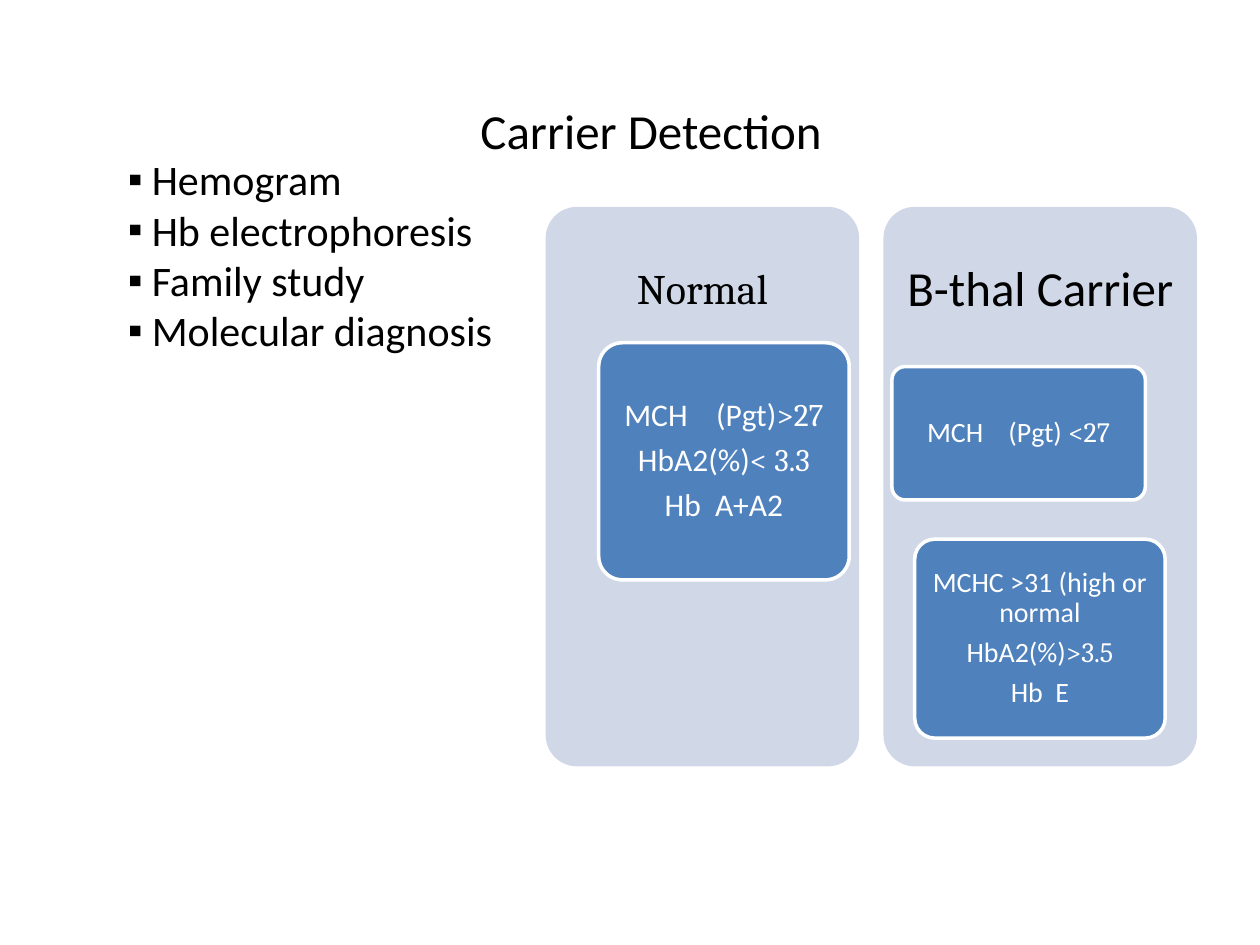
from lxml import etree
from pptx import Presentation
from pptx.dml.color import RGBColor
from pptx.enum.shapes import MSO_SHAPE
from pptx.enum.text import MSO_ANCHOR, MSO_AUTO_SIZE, PP_ALIGN
from pptx.oxml.ns import qn
from pptx.util import Cm, Pt

ROUNDED = MSO_SHAPE.ROUNDED_RECTANGLE
TOP, MIDDLE = MSO_ANCHOR.TOP, MSO_ANCHOR.MIDDLE
LEFT, CENTER = PP_ALIGN.LEFT, PP_ALIGN.CENTER
FIXED = MSO_AUTO_SIZE.NONE

COLORS = {"text": "000000", "panel": "D0D8E8", "card": "4F81BD", "light": "FFFFFF"}
SANS, SERIF = "Calibri", "Cambria"
PANEL_TOP, PANEL_WIDTH, PANEL_HEIGHT, HEADING_HEIGHT = 4.17, 6.32, 11.28, 3.38


def set_attributes(target, values):
    for name, value in values.items():
        setattr(target, name, value)


class SlideBuilder:
    def __init__(self, slide):
        self.slide = slide

    def color(self, name):
        return RGBColor.from_string(COLORS[name])

    def place(self, shape, box):
        names = ("left", "top", "width", "height")
        set_attributes(shape, dict(zip(names, map(Cm, box))))

    def fill_text(self, shape, lines, size, color, paragraph_format, anchor=MIDDLE, margins=(0.25, 0.13)):
        frame = shape.text_frame
        across, down = map(Cm, margins)
        set_attributes(frame, {
            "word_wrap": True, "auto_size": FIXED, "vertical_anchor": anchor,
            "margin_left": across, "margin_right": across,
            "margin_top": down, "margin_bottom": down,
        })
        for index, line in enumerate(lines):
            paragraph = frame.paragraphs[0] if index == 0 else frame.add_paragraph()
            set_attributes(paragraph, paragraph_format)
            for text, font_name in line:
                run = paragraph.add_run()
                run.text = text
                set_attributes(run.font, {"name": font_name, "size": Pt(size)})
                run.font.color.rgb = self.color(color)

    def centered(self, size):
        return {"alignment": CENTER, "line_spacing": 0.9, "space_after": Pt(size * 0.35)}

    def title(self, text, box):
        shape = self.slide.shapes.title
        self.place(shape, box)
        self.fill_text(shape, [[(text, SANS)]], 28, "text", {"alignment": CENTER}, TOP)

    def bullets(self, items, box):
        shape = self.slide.placeholders[1]
        self.place(shape, box)
        lines = [[(item, SANS)] for item in items]
        self.fill_text(shape, lines, 24, "text", {"alignment": LEFT, "space_before": Pt(0)}, TOP)
        indent = Cm(0.48)
        for paragraph in shape.text_frame.paragraphs:
            properties = paragraph._p.get_or_add_pPr()
            properties.set("marL", str(indent))
            properties.set("indent", str(-indent))
            etree.SubElement(properties, qn("a:buFont")).set("typeface", "Arial")
            etree.SubElement(properties, qn("a:buChar")).set("char", "▪")

    def rounded(self, box, fill):
        shape = self.slide.shapes.add_shape(ROUNDED, *map(Cm, box))
        shape.adjustments[0] = 0.1
        shape.shadow.inherit = False
        shape.fill.solid()
        shape.fill.fore_color.rgb = self.color(fill)
        shape.line.fill.background()
        return shape

    def panel(self, left, heading, font_name, size, margin):
        self.rounded((left, PANEL_TOP, PANEL_WIDTH, PANEL_HEIGHT), "panel")
        box = map(Cm, (left, PANEL_TOP, PANEL_WIDTH, HEADING_HEIGHT))
        shape = self.slide.shapes.add_textbox(*box)
        self.fill_text(shape, [[(heading, font_name)]], size, "text",
                       self.centered(size), margins=(margin, margin))

    def card(self, box, lines, size, margins):
        shape = self.rounded(box, "card")
        shape.line.color.rgb = self.color("light")
        shape.line.width = Pt(2)
        self.fill_text(shape, lines, size, "light", self.centered(size), margins=margins)


def main():
    presentation = Presentation()
    presentation.slide_width, presentation.slide_height = Cm(25.4), Cm(19.05)
    slide = presentation.slides.add_slide(presentation.slide_layouts[1])
    builder = SlideBuilder(slide)

    builder.title("Carrier Detection", (2.54, 1.9, 21.17, 1.45))
    builder.bullets(
        ["Hemogram", "Hb electrophoresis", "Family study", "Molecular diagnosis"],
        (2.33, 2.97, 21.17, 4.37))

    builder.panel(11, "Normal", SERIF, 24, 0.25)
    builder.card((12.07, 6.91, 5.05, 4.78), [
        [("MCH    (Pgt)", SANS), (">27", SERIF)],
        [("HbA2(%)", SANS), ("< 3.3", SERIF)],
        [("Hb  A+A2", SANS)],
    ], 18, (0.13, 0.1))

    builder.panel(17.81, "Β-thal Carrier", SANS, 28, 0.3)
    builder.card((17.98, 7.39, 5.11, 2.69), [
        [("MCH    (Pgt) ", SANS), ("<27", SERIF)],
    ], 16, (0.1, 0.08))
    builder.card((18.44, 10.87, 5.05, 4.01), [
        [("MCHC >31 (high or normal", SANS)],
        [("HbA2(%)", SANS), (">3.5", SERIF)],
        [("Hb  E", SANS)],
    ], 16, (0.1, 0.08))

    presentation.save("out.pptx")


if __name__ == "__main__":
    main()
